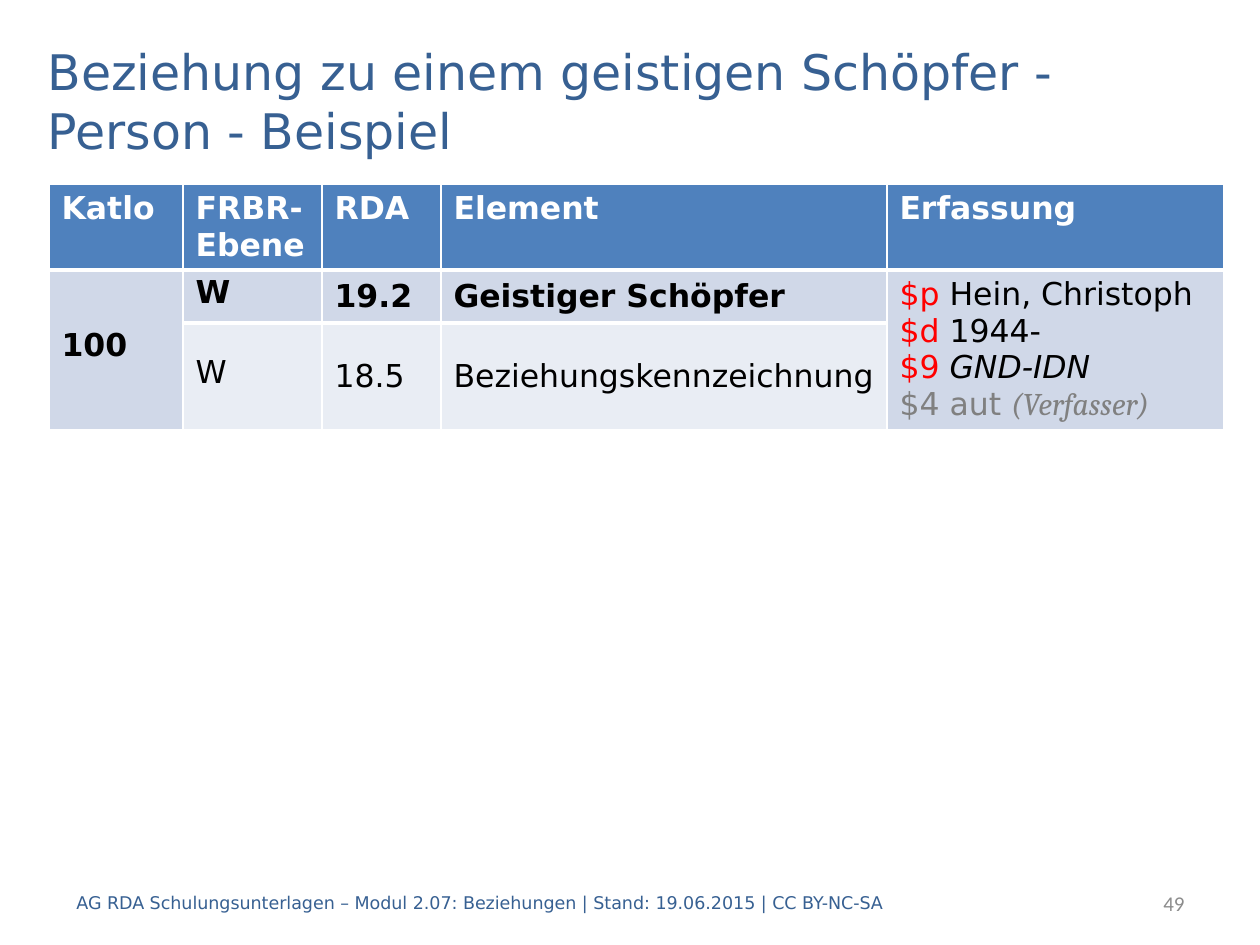
from lxml.etree import SubElement
from pptx import Presentation
from pptx.dml.color import RGBColor
from pptx.enum.text import MSO_ANCHOR, PP_ALIGN
from pptx.oxml.ns import qn
from pptx.util import Emu, Pt

PX = 914400 // 126
SANS, BLUE, BLACK, RED, GREY = "DejaVu Sans", "376092", "000000", "FF0000", "808080"
WHITE = "FFFFFF"

# Content: a cell is a list of lines, a line is a list of (text, format) spans
TITLE = "Beziehung zu einem geistigen Schöpfer - Person - Beispiel"
FOOTER = ("AG RDA Schulungsunterlagen – Modul 2.07: Beziehungen | "
          "Stand: 19.06.2015 | CC BY-NC-SA")
PAGE_NUMBER = "49"
HEADERS = ["Katlo", "FRBR-Ebene", "RDA", "Element", "Erfassung"]
BOLD = {"bold": True}
ENTRY = [
    [("$p", {"color": RED}), (" Hein, Christoph", {})],
    [("$d", {"color": RED}), (" 1944-", {})],
    [("$9 ", {"color": RED}), ("GND-IDN", {"italic": True})],
    [("$4 aut ", {"color": GREY}),
     ("(Verfasser)", {"color": GREY, "name": "Cambria", "italic": True})],
]
ROWS = [
    [[[(text, {"bold": True, "color": WHITE})]] for text in HEADERS],
    [[[("100", BOLD)]], [[("W", BOLD)]], [[("19.2", BOLD)]],
     [[("Geistiger Schöpfer", BOLD)]], ENTRY],
    [None, [[("W", {})]], [[("18.5", {})]], [[("Beziehungskennzeichnung", {})]], None],
]

# Layout in px
TITLE_BOX = (35, 25, 1191, 150)
TABLE_AT = (49, 184)
COLUMNS = [134, 139, 119, 446, 337]
ROW_HEIGHTS = [86, 53, 107]
ROW_FILLS = ["4F81BD", "D0D8E8", "E9EDF4"]
MERGED_COLUMNS = (0, 4)
SPACED_COLUMNS = (0, 1)
FOOTER_BOX = (64, 878, 843, 50)
NUMBER_BOX = (997, 878, 200, 50)


def px(*lengths):
    return [Emu(length * PX) for length in lengths]


def rgb(value):
    return RGBColor.from_string(value)


def add_span(para, text, size, color=BLACK, name=SANS, bold=False, italic=False):
    span = para.add_run()
    span.text = text
    formats = {"size": Pt(size), "name": name, "bold": bold, "italic": italic}
    for key, value in formats.items():
        setattr(span.font, key, value)
    span.font.color.rgb = rgb(color)


def add_label(page, place, text, align, **formats):
    frame = page.shapes.add_textbox(*px(*place)).text_frame
    frame.word_wrap = True
    frame.vertical_anchor = MSO_ANCHOR.MIDDLE
    frame.paragraphs[0].alignment = align
    add_span(frame.paragraphs[0], text, **formats)


def set_border(cell, side, points):
    properties = cell._tc.get_or_add_tcPr()
    line = SubElement(properties, qn(f"a:{side}"), w=str(Pt(points)))
    fill = SubElement(line, qn("a:solidFill"))
    SubElement(fill, qn("a:srgbClr"), val=WHITE)


def fill_cell(cell, lines, is_header, spaced):
    cell.vertical_anchor = MSO_ANCHOR.TOP if is_header else MSO_ANCHOR.MIDDLE
    para = cell.text_frame.paragraphs[0]
    if spaced and not is_header:
        spacing = {"line_spacing": 16, "space_before": 6, "space_after": 6}
        for key, value in spacing.items():
            setattr(para, key, Pt(value))
    for index, line in enumerate(lines):
        if index:
            para.add_line_break()
        for text, formats in line:
            add_span(para, text, 18, **formats)


def add_grid(page):
    size = (sum(COLUMNS), sum(ROW_HEIGHTS))
    table = page.shapes.add_table(len(ROWS), len(COLUMNS), *px(*TABLE_AT, *size)).table
    for column, width in zip(table.columns, px(*COLUMNS)):
        column.width = width
    for row, height in zip(table.rows, px(*ROW_HEIGHTS)):
        row.height = height
    for c in MERGED_COLUMNS:
        table.cell(1, c).merge(table.cell(2, c))
    for r, row in enumerate(ROWS):
        for c, lines in enumerate(row):
            if lines is None:
                continue
            cell = table.cell(r, c)
            # The rule between header and body is thicker; borders precede the fill
            if r < 2:
                set_border(cell, "lnT" if r else "lnB", 3)
            cell.fill.solid()
            cell.fill.fore_color.rgb = rgb(ROW_FILLS[r])
            fill_cell(cell, lines, r == 0, c in SPACED_COLUMNS)


def main():
    deck = Presentation()
    deck.slide_width, deck.slide_height = px(1260, 945)
    page = deck.slides.add_slide(deck.slide_layouts[5])

    # Title
    title = page.shapes.title
    title.left, title.top, title.width, title.height = px(*TITLE_BOX)
    title.text_frame.vertical_anchor = MSO_ANCHOR.MIDDLE
    para = title.text_frame.paragraphs[0]
    para.alignment = PP_ALIGN.LEFT
    add_span(para, TITLE, 28, BLUE)

    # Table, footer and page number
    add_grid(page)
    add_label(page, FOOTER_BOX, FOOTER, PP_ALIGN.LEFT, size=10, color=BLUE)
    add_label(page, NUMBER_BOX, PAGE_NUMBER, PP_ALIGN.RIGHT,
              size=12, color="8C8C8C", name="Calibri")
    deck.save("out.pptx")


if __name__ == "__main__":
    main()
